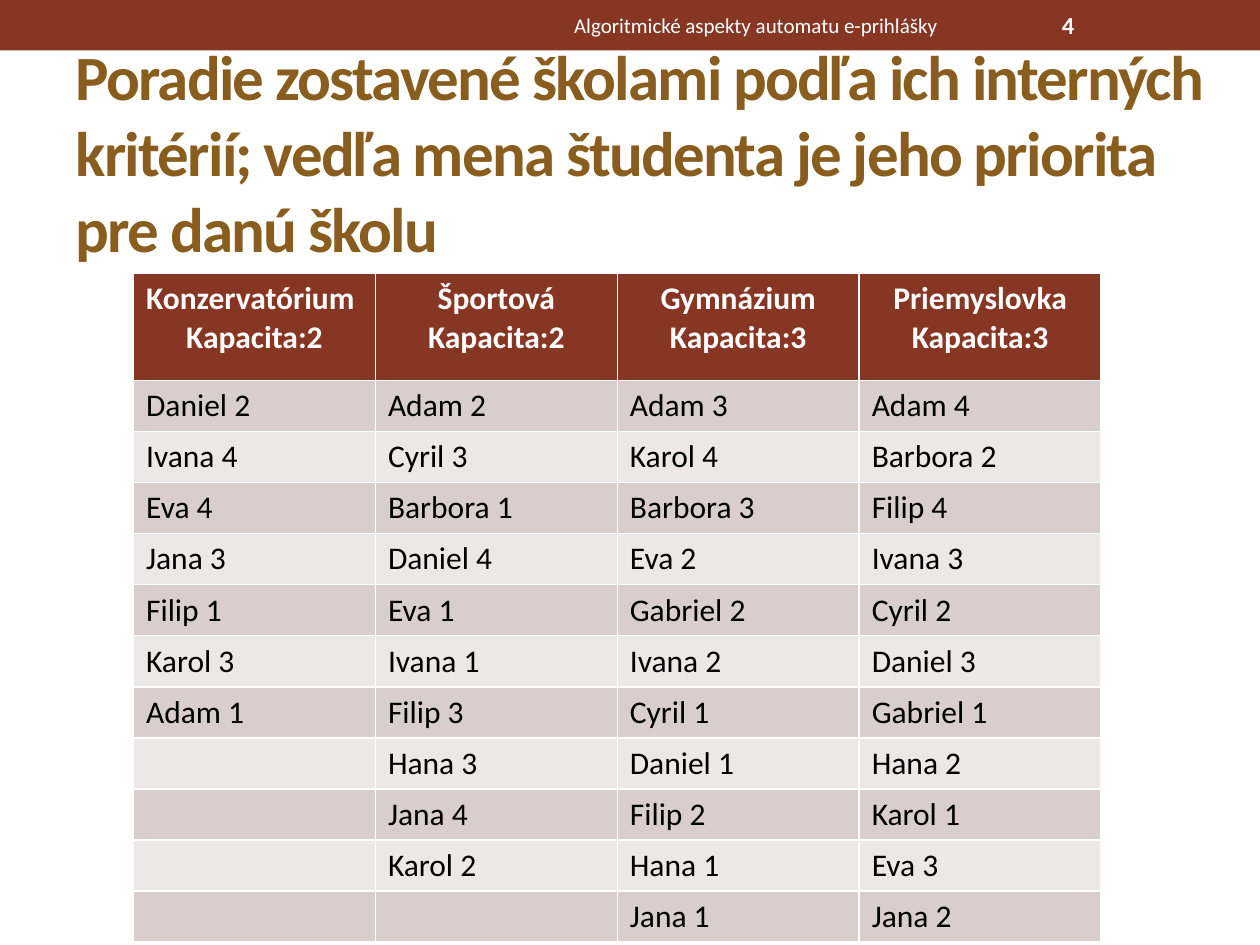
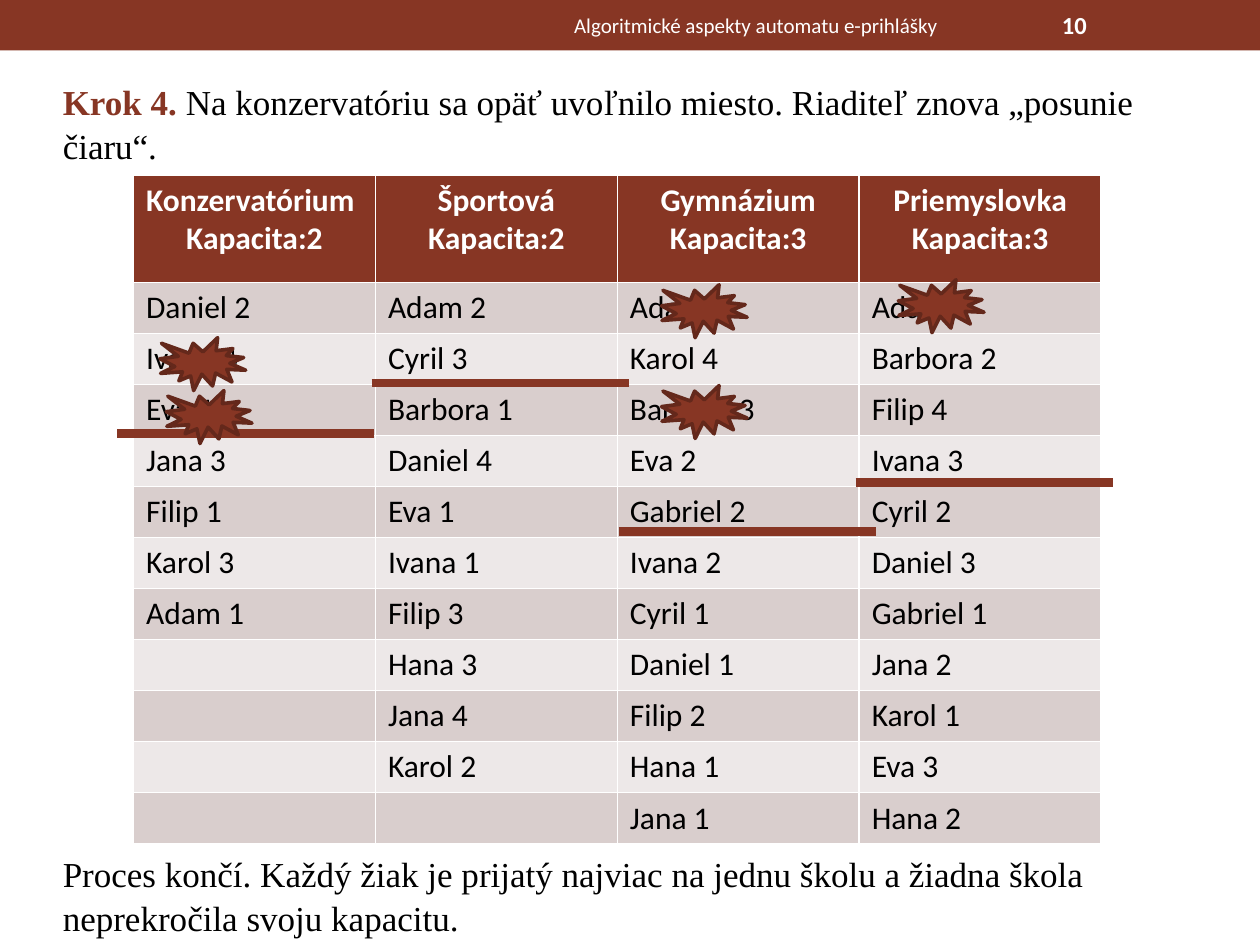
"""Build two slides on how schools rank and admit students."""
from dataclasses import dataclass
from itertools import zip_longest

from lxml.etree import SubElement
from pptx import Presentation
from pptx.dml.color import RGBColor as Color
from pptx.enum.shapes import MSO_CONNECTOR as Connector, MSO_SHAPE as Preset
from pptx.enum.text import MSO_ANCHOR as Anchor, MSO_AUTO_SIZE as AutoSize, PP_ALIGN as Align
from pptx.oxml.ns import qn
from pptx.util import Inches, Pt


@dataclass(frozen=True)
class Theme:
    accent: Color = Color.from_string("873624")
    accent_dark: Color = Color.from_string("64281B")
    title: Color = Color.from_string("895D1D")
    white: Color = Color.from_string("FFFFFF")
    black: Color = Color.from_string("000000")
    row_dark: Color = Color.from_string("D9CECD")
    row_light: Color = Color.from_string("EDE8E8")
    sans: str = "Calibri"
    serif: str = "Times New Roman"
    title_size: int = 36
    body_size: int = 20
    table_size: int = 18
    number_size: int = 14
    footer_size: int = 12


THEME = Theme()
FOOTER = "Algoritmické aspekty automatu e-prihlášky"
SCHOOLS = [("Konzervatórium", 2), ("Športová", 2), ("Gymnázium", 3), ("Priemyslovka", 3)]
RANKINGS = [
    ["Daniel 2", "Ivana 4", "Eva 4", "Jana 3", "Filip 1", "Karol 3", "Adam 1"],
    ["Adam 2", "Cyril 3", "Barbora 1", "Daniel 4", "Eva 1", "Ivana 1", "Filip 3",
     "Hana 3", "Jana 4", "Karol 2"],
    ["Adam 3", "Karol 4", "Barbora 3", "Eva 2", "Gabriel 2", "Ivana 2", "Cyril 1",
     "Daniel 1", "Filip 2", "Hana 1", "Jana 1"],
]
INDUSTRIAL_TOP = ["Adam 4", "Barbora 2", "Filip 4", "Ivana 3", "Cyril 2", "Daniel 3", "Gabriel 1"]
TABLE_LEFT, TABLE_WIDTH, TABLE_HEIGHT, HEADER_HEIGHT = 1.06, 7.68, 5.31, 0.85
LINE_LENGTH = 2.04


def add_span(para, text, size, color, bold=False, face=THEME.sans):
    span = para.add_run()
    span.text = text
    span.font.name = face
    span.font.size = Pt(size)
    span.font.bold = bold
    span.font.color.rgb = color
    return span


def add_box(slide, left, top, width, height, anchor=Anchor.TOP):
    box = slide.shapes.add_textbox(Inches(left), Inches(top), Inches(width), Inches(height))
    box.text_frame.word_wrap = True
    box.text_frame.vertical_anchor = anchor
    return box.text_frame


deck = Presentation()
deck.slide_width, deck.slide_height = Inches(10), Inches(7.5)
ranking_slide = deck.slides.add_slide(deck.slide_layouts[5])
step_slide = deck.slides.add_slide(deck.slide_layouts[6])

band = step_slide.shapes.add_shape(Preset.RECTANGLE, 0, 0, deck.slide_width, Inches(0.4))
band.shadow.inherit = False
band.fill.solid()
band.fill.fore_color.rgb = THEME.accent
band.line.fill.background()
band.element.nvSpPr.cNvPr.set("id", "20")
deck.slide_master.shapes.element.insert(2, band.element)

title = ranking_slide.shapes.title
title.left, title.top, title.width, title.height = map(Inches, (0.5, 0.38, 9.15, 1.64))
title.text_frame.word_wrap = True
title.text_frame.auto_size = AutoSize.NONE
title.text_frame.vertical_anchor = Anchor.MIDDLE
title_para = title.text_frame.paragraphs[0]
title_para.alignment = Align.LEFT
title_span = add_span(
    title_para,
    "Poradie zostavené školami podľa ich interných kritérií; "
    "vedľa mena študenta je jeho priorita pre danú školu",
    THEME.title_size, THEME.title, True)
title_span.font._element.set("spc", "-100")

for slide, number, table_top, industrial_end in [
    (ranking_slide, "4", 2.17, ["Hana 2", "Karol 1", "Eva 3", "Jana 2"]),
    (step_slide, "10", 1.39, ["Jana 2", "Karol 1", "Eva 3", "Hana 2"]),
]:
    number_para = add_box(slide, 8.33, 0.02, 1.17, 0.36, Anchor.MIDDLE).paragraphs[0]
    add_span(number_para, number, THEME.number_size, THEME.white, True)
    footer_para = add_box(slide, 3.75, 0.02, 4.5, 0.36, Anchor.MIDDLE).paragraphs[0]
    footer_para.alignment = Align.CENTER
    add_span(footer_para, FOOTER, THEME.footer_size, THEME.white)

    rows = list(zip_longest(*RANKINGS, INDUSTRIAL_TOP + industrial_end, fillvalue=""))
    table = slide.shapes.add_table(
        len(rows) + 1, len(SCHOOLS), Inches(TABLE_LEFT), Inches(table_top),
        Inches(TABLE_WIDTH), Inches(TABLE_HEIGHT)).table
    table.rows[0].height = Inches(HEADER_HEIGHT)
    for column, (school, capacity) in enumerate(SCHOOLS):
        cell = table.cell(0, column)
        cell.fill.solid()
        cell.fill.fore_color.rgb = THEME.accent
        name_para = cell.text_frame.paragraphs[0]
        name_para.alignment = Align.CENTER if column else Align.LEFT
        add_span(name_para, school, THEME.table_size, THEME.white, True)
        capacity_para = cell.text_frame.add_paragraph()
        capacity_para.alignment = Align.CENTER
        add_span(capacity_para, f"Kapacita:{capacity}", THEME.table_size, THEME.white, True)
    for index, students in enumerate(rows, start=1):
        table.rows[index].height = Inches((TABLE_HEIGHT - HEADER_HEIGHT) / len(rows))
        for column, student in enumerate(students):
            cell = table.cell(index, column)
            cell.fill.solid()
            cell.fill.fore_color.rgb = THEME.row_dark if index % 2 else THEME.row_light
            if student:
                add_span(cell.text_frame.paragraphs[0], student, THEME.table_size, THEME.black)

for top, lead, text in [
    (0.57, "Krok 4.",
     " Na konzervatóriu sa opäť uvoľnilo miesto. Riaditeľ znova „posunie čiaru“."),
    (6.7, "",
     "Proces končí. Každý žiak je prijatý najviac na jednu školu "
     "a žiadna škola neprekročila svoju kapacitu."),
]:
    frame = add_box(step_slide, 0.4, top, 9, 0.77)
    frame.auto_size = AutoSize.SHAPE_TO_FIT_TEXT
    para = frame.paragraphs[0]
    para.line_spacing = 1.05
    if lead:
        add_span(para, lead, THEME.body_size, THEME.accent, True, THEME.serif)
    add_span(para, text, THEME.body_size, THEME.black, face=THEME.serif)

for left, top in [(0.93, 3.44), (2.95, 3.04), (4.91, 4.22), (6.79, 3.83)]:
    cutoff = step_slide.shapes.add_connector(
        Connector.STRAIGHT, Inches(left), Inches(top), Inches(left + LINE_LENGTH), Inches(top))
    cutoff.line.color.rgb = THEME.accent
    cutoff.line.width = Pt(5)
    SubElement(cutoff.element.spPr, qn("a:effectLst"))

for left, top in [(5.25, 3.06), (7.13, 2.22), (5.25, 2.26), (1.27, 2.68), (1.32, 3.1)]:
    seal = step_slide.shapes.add_shape(
        Preset.EXPLOSION1, Inches(left), Inches(top), Inches(0.68), Inches(0.42))
    seal.shadow.inherit = False
    seal.fill.solid()
    seal.fill.fore_color.rgb = THEME.accent
    seal.line.color.rgb = THEME.accent_dark
    seal.line.width = Pt(2.08)

deck.save("out.pptx")
